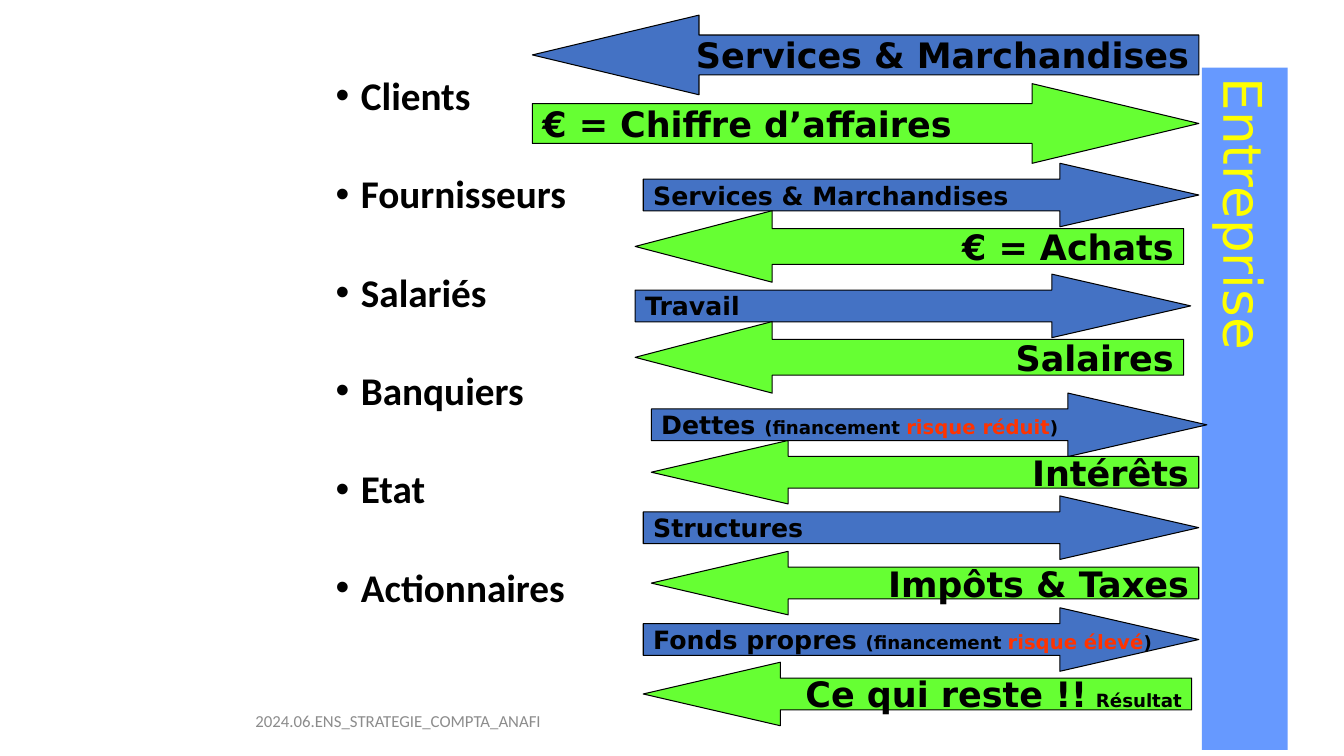
from dataclasses import dataclass

import pptx
import pptx.dml.color
import pptx.enum.shapes
import pptx.enum.text
import pptx.util
from lxml import etree

Inches = pptx.util.Inches
Pt = pptx.util.Pt
Align = pptx.enum.text.PP_ALIGN
Anchor = pptx.enum.text.MSO_ANCHOR
Preset = pptx.enum.shapes.MSO_SHAPE


@dataclass(frozen=True)
class Theme:
    black: str = "000000"
    grey: str = "8C8C8C"
    yellow: str = "FFFF00"
    red: str = "FF3300"
    resource: str = "4472C4"
    money: str = "66FF33"
    company: str = "6699FF"
    body_font: str = "Calibri"
    diagram_font: str = "DejaVu Sans"
    company_size: int = 38
    partner_size: int = 28
    large: int = 25
    medium: int = 18
    risk: int = 14
    small: int = 13
    footer: int = 12


THEME = Theme()

PARTNERS = ["Clients", "Fournisseurs", "Salariés", "Banquiers", "Etat", "Actionnaires"]


def financing(name, risk):
    return [(name + " ", THEME.medium, THEME.black),
            ("(financement ", THEME.small, THEME.black),
            (risk, THEME.risk, THEME.red),
            (")", THEME.small, THEME.black)]


def label(text, size):
    return [(text, size, THEME.black)]


# Flows to the company point right, flows to the partners point left:
# (points right, colour, box, label runs)
FLOWS = [
    (False, THEME.resource, (5.28, 0.15, 6.61, 0.79), label("Services & Marchandises", THEME.large)),
    (True, THEME.money, (5.28, 0.83, 6.61, 0.79), label("€ = Chiffre d’affaires", THEME.large)),
    (True, THEME.resource, (6.38, 1.62, 5.51, 0.63), label("Services & Marchandises", THEME.medium)),
    (False, THEME.money, (6.3, 2.09, 5.44, 0.71), label("€ = Achats", THEME.large)),
    (True, THEME.resource, (6.3, 2.72, 5.51, 0.63), label("Travail", THEME.medium)),
    (False, THEME.money, (6.3, 3.19, 5.44, 0.71), label("Salaires", THEME.large)),
    (True, THEME.resource, (6.46, 3.9, 5.51, 0.63), financing("Dettes", "risque réduit")),
    (False, THEME.money, (6.46, 4.37, 5.43, 0.63), label("Intérêts", THEME.large)),
    (True, THEME.resource, (6.38, 4.92, 5.51, 0.63), label("Structures", THEME.medium)),
    (False, THEME.money, (6.46, 5.47, 5.43, 0.63), label("Impôts & Taxes", THEME.large)),
    (True, THEME.resource, (6.38, 6.03, 5.51, 0.63), financing("Fonds propres", "risque élevé")),
    (False, THEME.money, (6.38, 6.57, 5.44, 0.63),
     label("Ce qui reste !!", THEME.large) + label(" ", THEME.medium) + label("Résultat", THEME.small)),
]


def rgb(value):
    return pptx.dml.color.RGBColor.from_string(value)


def style(font, name=None, size=None, color=None, bold=None):
    if name:
        font.name = name
    if size:
        font.size = Pt(size)
    if color:
        font.color.rgb = rgb(color)
    if bold is not None:
        font.bold = bold


def add_filled_shape(slide, preset, box, fill):
    shape = slide.shapes.add_shape(preset, *map(Inches, box))
    shape.shadow.inherit = False
    shape.fill.solid()
    shape.fill.fore_color.rgb = rgb(fill)
    return shape


def fill_partner_list(partners, box):
    partners.left, partners.top, partners.width, partners.height = map(Inches, box)
    frame = partners.text_frame
    frame.auto_size = pptx.enum.text.MSO_AUTO_SIZE.NONE
    frame.text = "\n".join(PARTNERS)
    for partner in frame.paragraphs:
        properties = partner._p.get_or_add_pPr()
        properties.set("marL", str(Inches(0.25)))
        properties.set("indent", str(-Inches(0.25)))
        bullet = etree.SubElement(properties, pptx.oxml.ns.qn("a:buChar"))
        bullet.set("char", "•")
        partner.line_spacing = 0.9
        partner.space_before = Pt(0)
        partner.space_after = Pt(40)
        style(partner.font, THEME.body_font, THEME.partner_size, THEME.black, True)


def add_company(slide, box):
    company = add_filled_shape(slide, Preset.RECTANGLE, box, THEME.company)
    company.line.fill.background()
    frame = company.text_frame
    frame.vertical_anchor = Anchor.MIDDLE
    frame._txBody.bodyPr.set("vert", "eaVert")
    name = frame.paragraphs[0]
    name.text = "Entreprise"
    name.alignment = Align.LEFT
    style(name.font, THEME.diagram_font, THEME.company_size, THEME.yellow)


def add_flow(slide, points_right, color, box, runs):
    preset = Preset.RIGHT_ARROW if points_right else Preset.LEFT_ARROW
    flow = add_filled_shape(slide, preset, box, color)
    flow.line.color.rgb = rgb(THEME.black)
    flow.line.width = Pt(0.75)
    # The head takes a quarter of the length
    flow.adjustments[0] = 0.5
    flow.adjustments[1] = box[2] / 4 / box[3]
    frame = flow.text_frame
    frame.word_wrap = False
    frame.vertical_anchor = Anchor.MIDDLE
    caption = frame.paragraphs[0]
    caption.alignment = Align.LEFT if points_right else Align.RIGHT
    style(caption.font, THEME.diagram_font, bold=True)
    if len(runs) == 1:
        text, size, text_color = runs[0]
        caption.text = text
        style(caption.font, size=size, color=text_color)
        return
    for text, size, text_color in runs:
        run = caption.add_run()
        run.text = text
        style(run.font, size=size, color=text_color)


def add_footer(slide, box):
    frame = slide.shapes.add_textbox(*map(Inches, box)).text_frame
    frame.word_wrap = True
    frame.vertical_anchor = Anchor.MIDDLE
    reference = frame.paragraphs[0]
    reference.text = "2024.06.ENS_STRATEGIE_COMPTA_ANAFI"
    reference.alignment = Align.CENTER
    style(reference.font, THEME.body_font, THEME.footer, THEME.grey)


def main():
    deck = pptx.Presentation()
    deck.slide_width, deck.slide_height = Inches(13.33), Inches(7.5)
    slide = deck.slides.add_slide(deck.slide_layouts[1])
    title, partners = slide.placeholders
    title._element.getparent().remove(title._element)

    # Partners on the left, company on the right, flows between them
    fill_partner_list(partners, (3.23, 0.71, 3.23, 6.42))
    add_company(slide, (11.92, 0.67, 0.85, 6.77))
    for flow in FLOWS:
        add_flow(slide, *flow)
    add_footer(slide, (1.7, 6.95, 4.5, 0.4))
    deck.save("out.pptx")


if __name__ == "__main__":
    main()
